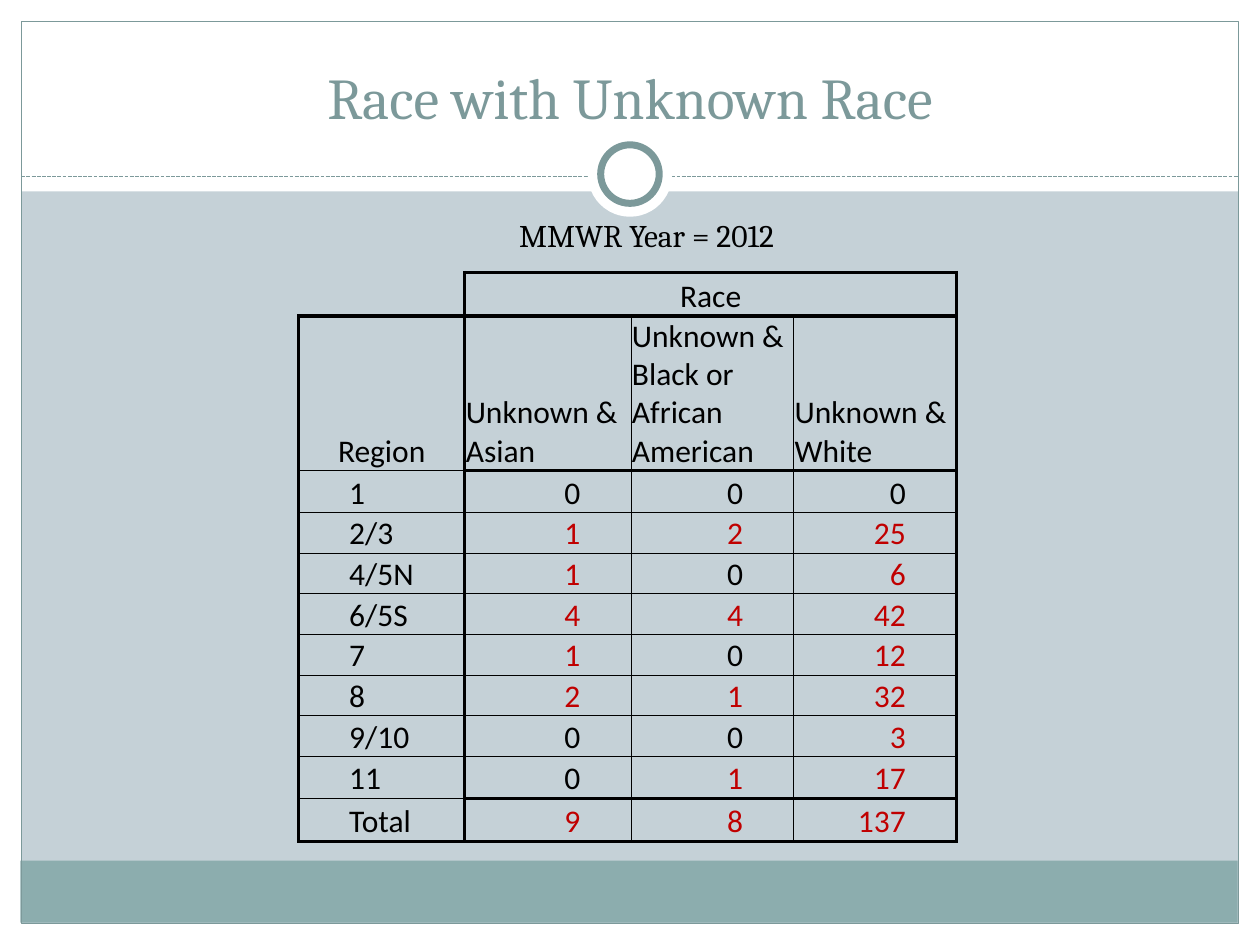
from dataclasses import dataclass

from lxml import etree
from pptx import Presentation
from pptx.dml.color import RGBColor
from pptx.enum.dml import MSO_LINE
from pptx.enum.shapes import MSO_CONNECTOR, MSO_SHAPE
from pptx.enum.text import MSO_ANCHOR as Anchor, PP_ALIGN as Align
from pptx.oxml.ns import qn
from pptx.util import Cm, Pt


@dataclass(frozen=True)
class Theme:
    background: str = "C5D1D7"
    white: str = "FFFFFF"
    band: str = "8CADAE"
    accent: str = "7C999A"
    black: str = "000000"
    red: str = "C00000"
    heading_font: str = "Cambria"
    table_font: str = "Calibri"
    title_size: int = 33
    text_size: int = 18
    thin: float = 0.5
    heavy: float = 2
    frame: float = 0.75
    ring: float = 4


class SlideBuilder:
    def __init__(self, slide, theme):
        self.slide = slide
        self.theme = theme
        fill = slide.background.fill
        fill.solid()
        fill.fore_color.rgb = RGBColor.from_string(theme.background)

    def format_text(self, paragraph, size, font, color, align):
        paragraph.alignment = align
        for run in paragraph.runs:
            run.font.size = Pt(size)
            run.font.name = font
            run.font.color.rgb = RGBColor.from_string(color)

    def add_shape(self, kind, box, fill=None, line=None, width=0):
        shape = self.slide.shapes.add_shape(kind, *map(Cm, box))
        shape.shadow.inherit = False
        if fill:
            shape.fill.solid()
            shape.fill.fore_color.rgb = RGBColor.from_string(fill)
        else:
            shape.fill.background()
        if line:
            shape.line.color.rgb = RGBColor.from_string(line)
            shape.line.width = Pt(width)
        else:
            shape.line.fill.background()

    def add_dashed_line(self, left, right, y):
        line = self.slide.shapes.add_connector(
            MSO_CONNECTOR.STRAIGHT, Cm(left), Cm(y), Cm(right), Cm(y))
        line.line.color.rgb = RGBColor.from_string(self.theme.accent)
        line.line.width = Pt(self.theme.frame)
        line.line.dash_style = MSO_LINE.SQUARE_DOT
        etree.SubElement(line._element.spPr, qn("a:effectLst"))

    def add_title(self, text, box):
        title = self.slide.shapes.title
        title.left, title.top, title.width, title.height = map(Cm, box)
        # Bring the title in front of the white header band
        self.slide.shapes._spTree.append(title._element)
        title.text_frame.text = text
        title.text_frame.vertical_anchor = Anchor.BOTTOM
        self.format_text(title.text_frame.paragraphs[0], self.theme.title_size,
                         self.theme.heading_font, self.theme.accent, Align.CENTER)

    def add_text(self, text, box):
        frame = self.slide.shapes.add_textbox(*map(Cm, box)).text_frame
        frame.word_wrap = True
        frame.text = text
        self.format_text(frame.paragraphs[0], self.theme.text_size,
                         self.theme.heading_font, self.theme.black, Align.CENTER)

    def set_borders(self, cell, widths):
        """Draw the left, right, top and bottom border; width 0 means none."""
        properties = cell._tc.get_or_add_tcPr()
        for index, (side, width) in enumerate(zip("LRTB", widths)):
            line = etree.Element(qn(f"a:ln{side}"), w=str(Pt(width)))
            if width:
                fill = etree.SubElement(line, qn("a:solidFill"))
                etree.SubElement(fill, qn("a:srgbClr"), val=self.theme.black)
            else:
                etree.SubElement(line, qn("a:noFill"))
            properties.insert(index, line)

    def border_widths(self, row, column, last_row, last_column):
        thin, heavy = self.theme.thin, self.theme.heavy
        if row == 0:
            return (heavy,) * 4 if column else (0, heavy, 0, heavy)
        # Heavy lines frame the header, the counts and the totals
        heavy_edges = {1, last_row + 1} | ({2, last_row} if column else set())
        sides = (column in (0, 1), column in (0, last_column),
                 row in heavy_edges, row + 1 in heavy_edges)
        return [heavy if side else thin for side in sides]

    def format_cell(self, cell, text, row, column):
        narrow, wide = Cm(0.02), Cm(1.02)
        is_body = row > 1
        is_count = is_body and column > 0
        cell.fill.background()
        cell.vertical_anchor = Anchor.BOTTOM
        cell.margin_left = wide if is_body and column == 0 else narrow
        cell.margin_right = wide if is_count else narrow
        cell.margin_top, cell.margin_bottom = narrow, 0
        cell.text_frame.text = text
        if is_count:
            align = Align.RIGHT
        else:
            align = Align.CENTER if row == 0 or (row, column) == (1, 0) else Align.LEFT
        color = self.theme.red if is_count and text != "0" else self.theme.black
        self.format_text(cell.text_frame.paragraphs[0], self.theme.text_size,
                         self.theme.table_font, color, align)

    def add_table(self, rows, left, top, widths, heights):
        table = self.slide.shapes.add_table(
            len(rows), len(widths), Cm(left), Cm(top),
            Cm(sum(widths)), Cm(sum(heights))).table
        table.first_row = table.horz_banding = False
        for column, width in zip(table.columns, widths):
            column.width = Cm(width)
        for row, height in zip(table.rows, heights):
            row.height = Cm(height)
        table.cell(0, 1).merge(table.cell(0, len(widths) - 1))
        for r, values in enumerate(rows):
            for c, text in enumerate(values):
                cell = table.cell(r, c)
                self.format_cell(cell, text, r, c)
                self.set_borders(cell, self.border_widths(
                    r, c, len(rows) - 1, len(widths) - 1))


REGION_ROWS = [
    ["", "Race", "", ""],
    ["Region", "Unknown & Asian", "Unknown & Black or African American",
     "Unknown & White"],
    ["1", "0", "0", "0"],
    ["2/3", "1", "2", "25"],
    ["4/5N", "1", "0", "6"],
    ["6/5S", "4", "4", "42"],
    ["7", "1", "0", "12"],
    ["8", "2", "1", "32"],
    ["9/10", "0", "0", "3"],
    ["11", "0", "1", "17"],
    ["Total", "9", "8", "137"],
]


def main():
    theme = Theme()
    presentation = Presentation()
    presentation.slide_width, presentation.slide_height = Cm(25.4), Cm(19.05)
    slide = presentation.slides.add_slide(presentation.slide_layouts[5])
    builder = SlideBuilder(slide, theme)

    # White margins and header
    for box in [(0, 18.62, 25.4, 0.43), (0, 0, 25.4, 3.86),
                (0, 0, 0.43, 19.05), (24.97, 0, 0.43, 19.05)]:
        builder.add_shape(MSO_SHAPE.RECTANGLE, box, theme.white)

    # Footer band, frame and divider
    builder.add_shape(MSO_SHAPE.RECTANGLE, (0.41, 17.35, 24.54, 1.25), theme.band)
    builder.add_shape(MSO_SHAPE.RECTANGLE, (0.43, 0.43, 24.54, 18.19),
                      line=theme.accent, width=theme.frame)
    builder.add_dashed_line(0.43, 24.97, 3.56)

    # Ring on the divider
    builder.add_shape(MSO_SHAPE.OVAL, (11.85, 2.67, 1.7, 1.7), theme.white)
    builder.add_shape(MSO_SHAPE.OVAL, (12.11, 2.92, 1.18, 1.18), theme.white,
                      theme.accent, theme.ring)

    # Title, table and caption
    builder.add_title("Race with Unknown Race", (0.85, 0.64, 23.7, 2.12))
    builder.add_table(REGION_ROWS, 6.02, 5.49, [3.35, 3.35, 3.28, 3.28],
                      [0.88, 3.1, 0.84] + [0.82] * 6 + [0.84, 0.87])
    builder.add_text("MMWR Year = 2012", (7.42, 4.24, 11.23, 1.02))

    presentation.save("out.pptx")


if __name__ == "__main__":
    main()
